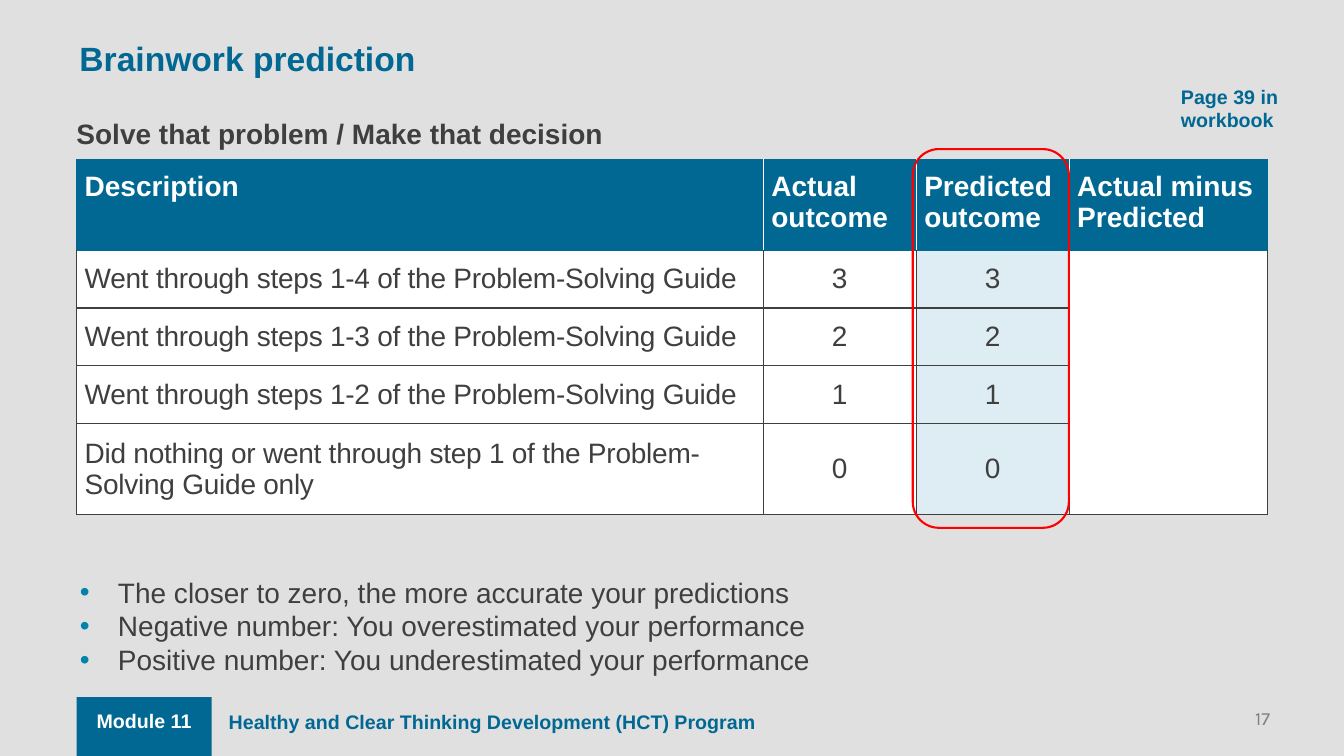
"""Build the Brainwork prediction slide."""
from dataclasses import dataclass
from typing import Any, Optional

import pptx
import pptx.dml.color
import pptx.enum.shapes
import pptx.enum.text
import pptx.oxml.ns
import pptx.util
from lxml import etree

Pt = pptx.util.Pt
RGBColor = pptx.dml.color.RGBColor
Align = pptx.enum.text.PP_ALIGN
Anchor = pptx.enum.text.MSO_ANCHOR
Shape = pptx.enum.shapes.MSO_SHAPE
qn = pptx.oxml.ns.qn

BACKGROUND = RGBColor(0xE0, 0xE0, 0xE0)
BLUE = RGBColor(0x00, 0x68, 0x92)
BULLET_BLUE = RGBColor(0x00, 0x82, 0xAA)
PALE_BLUE = RGBColor(0xDE, 0xED, 0xF3)
DARK = RGBColor(0x3F, 0x3F, 0x3F)
GREY = RGBColor(0x80, 0x80, 0x80)
WHITE = RGBColor(0xFF, 0xFF, 0xFF)
RED = RGBColor(0xFF, 0x00, 0x00)


@dataclass(frozen=True)
class Style:
    size: float
    color: RGBColor
    bold: bool = False
    font: str = "Arial"
    align: Any = Align.LEFT
    tracking: int = 0


@dataclass(frozen=True)
class Box:
    left: float
    top: float
    width: float
    height: float

    def lengths(self) -> tuple:
        return Pt(self.left), Pt(self.top), Pt(self.width), Pt(self.height)


@dataclass(frozen=True)
class Label:
    text: str
    box: Box
    style: Style
    inset: bool = True


@dataclass(frozen=True)
class Outcome:
    description: str
    score: str
    height: float


TITLE = Style(24, BLUE, bold=True)
HEADER = Style(20, WHITE, bold=True)
BODY = Style(20, DARK)
DESCRIPTION = Style(20, DARK, tracking=-20)
SCORE = Style(20, DARK, align=Align.CENTER)
NOTE = Style(14, BLUE, bold=True)

LABELS = [
    Label("Healthy and Clear Thinking Development (HCT) Program",
          Box(156.25, 503.25, 802, 34), NOTE),
    Label("Module 11", Box(54.75, 502.5, 96.5, 24.5),
          Style(14, WHITE, bold=True, align=Align.CENTER)),
    Label("17", Box(763.25, 504.75, 144, 14.5),
          Style(13.3, GREY, font="Karla", align=Align.RIGHT), inset=False),
    Label("Solve that problem / Make that decision",
          Box(47.5, 79.5, 453, 31.5), Style(20, DARK, bold=True)),
    Label("Page 39 in workbook", Box(836.5, 57, 99.5, 41), NOTE),
]
HEADINGS = ["Description", "Actual outcome", "Predicted outcome",
            "Actual minus Predicted"]
COLUMN_WIDTHS = [490.5, 109.25, 109.25, 141.75]
HEADER_HEIGHT = 65
OUTCOMES = [
    Outcome("Went through steps 1-4 of the Problem-Solving Guide", "3", 41.25),
    Outcome("Went through steps 1-3 of the Problem-Solving Guide", "2", 41.25),
    Outcome("Went through steps 1-2 of the Problem-Solving Guide", "1", 41.25),
    Outcome("Did nothing or went through step 1 of the Problem-Solving Guide only",
            "0", 65),
]
BULLETS = [
    "The closer to zero, the more accurate your predictions",
    "Negative number: You overestimated your performance",
    "Positive number: You underestimated your performance",
]


def add_text(paragraph: Any, text: str, style: Style) -> None:
    paragraph.alignment = style.align
    run = paragraph.add_run()
    run.text = text
    run.font.name = style.font
    run.font.size = Pt(style.size)
    run.font.bold = style.bold
    run.font.color.rgb = style.color
    if style.tracking:
        run.font._element.set("spc", str(style.tracking))


def clear_insets(frame: Any) -> None:
    frame.margin_left = frame.margin_right = Pt(0)
    frame.margin_top = frame.margin_bottom = Pt(0)


def place(placeholder: Any, box: Box, anchor: Any) -> Any:
    placeholder.left, placeholder.top, placeholder.width, placeholder.height = box.lengths()
    frame = placeholder.text_frame
    frame.auto_size = pptx.enum.text.MSO_AUTO_SIZE.NONE
    frame.word_wrap = True
    frame.vertical_anchor = anchor
    clear_insets(frame)
    return frame


def add_bullet(paragraph: Any, text: str) -> None:
    add_text(paragraph, text, BODY)
    paragraph.space_before = Pt(0)
    paragraph.line_spacing = 1.01
    properties = paragraph._p.get_or_add_pPr()
    properties.set("marL", str(Pt(27.25)))
    properties.set("indent", str(-Pt(27.25)))
    color = etree.SubElement(properties, qn("a:buClr"))
    etree.SubElement(color, qn("a:srgbClr"), val=str(BULLET_BLUE))
    etree.SubElement(properties, qn("a:buFont"), typeface="Arial")
    etree.SubElement(properties, qn("a:buChar"), char="•")


def add_label(slide: Any, label: Label) -> None:
    frame = slide.shapes.add_textbox(*label.box.lengths()).text_frame
    frame.word_wrap = True
    if not label.inset:
        clear_insets(frame)
    add_text(frame.paragraphs[0], label.text, label.style)


def add_shape(slide: Any, preset: Any, box: Box, fill: Optional[RGBColor],
              line: Optional[RGBColor]) -> None:
    shape = slide.shapes.add_shape(preset, *box.lengths())
    shape.shadow.inherit = False
    for part, color in ((shape.fill, fill), (shape.line.fill, line)):
        if color is None:
            part.background()
        else:
            part.solid()
            part.fore_color.rgb = color
    if line is not None:
        shape.line.width = Pt(1.5)


def format_cell(cell: Any, fill: RGBColor, anchor: Any, borders: dict) -> None:
    cell.fill.solid()
    cell.fill.fore_color.rgb = fill
    cell.vertical_anchor = anchor
    cell.margin_left = cell.margin_right = Pt(5.75)
    cell.margin_top = cell.margin_bottom = Pt(8.65)
    properties = cell._tc.get_or_add_tcPr()
    for position, side in enumerate("LRTB"):
        line = etree.Element(qn(f"a:ln{side}"), w=str(Pt(1)))
        solid = etree.SubElement(line, qn("a:solidFill"))
        etree.SubElement(solid, qn("a:srgbClr"), val=str(borders[side]))
        properties.insert(position, line)


def add_outcome_table(slide: Any) -> None:
    heights = [HEADER_HEIGHT] + [outcome.height for outcome in OUTCOMES]
    box = Box(54.75, 113.75, sum(COLUMN_WIDTHS), sum(heights))
    table = slide.shapes.add_table(len(heights), len(HEADINGS), *box.lengths()).table
    table.first_row = table.horz_banding = False
    for column, width in zip(table.columns, COLUMN_WIDTHS):
        column.width = Pt(width)
    for row, height in zip(table.rows, heights):
        row.height = Pt(height)
    last = len(HEADINGS) - 1
    for index, heading in enumerate(HEADINGS):
        cell = table.cell(0, index)
        format_cell(cell, BLUE, Anchor.TOP, {
            "L": WHITE if index else BLUE, "R": WHITE if index < last else BLUE,
            "T": BLUE, "B": BLUE})
        add_text(cell.text_frame.paragraphs[0], heading, HEADER)
    for row, outcome in enumerate(OUTCOMES, 1):
        borders = {"L": DARK, "R": DARK, "T": BLUE if row == 1 else DARK, "B": DARK}
        for index, fill in enumerate((WHITE, WHITE, PALE_BLUE, WHITE)):
            format_cell(table.cell(row, index), fill, Anchor.MIDDLE, borders)
        texts = ((outcome.description, DESCRIPTION), (outcome.score, SCORE),
                 (outcome.score, SCORE))
        for index, (text, style) in enumerate(texts):
            add_text(table.cell(row, index).text_frame.paragraphs[0], text, style)
    table.cell(1, last).merge(table.cell(len(OUTCOMES), last))


def main() -> None:
    presentation = pptx.Presentation()
    presentation.slide_width, presentation.slide_height = Pt(960), Pt(540)
    slide = presentation.slides.add_slide(presentation.slide_layouts[1])
    slide.background.fill.solid()
    slide.background.fill.fore_color.rgb = BACKGROUND

    title = place(slide.shapes.title, Box(56.75, 24.5, 642, 34), Anchor.MIDDLE)
    add_text(title.paragraphs[0], "Brainwork prediction", TITLE)
    body = place(slide.placeholders[1], Box(57, 410.5, 850, 99.5), Anchor.TOP)
    for index, text in enumerate(BULLETS):
        add_bullet(body.add_paragraph() if index else body.paragraphs[0], text)

    add_shape(slide, Shape.RECTANGLE, Box(54.75, 498, 96.5, 42), BLUE, None)
    add_outcome_table(slide)
    add_shape(slide, Shape.ROUNDED_RECTANGLE, Box(652, 106.5, 111.5, 270.5), None, RED)
    for label in LABELS:
        add_label(slide, label)
    presentation.save("out.pptx")


if __name__ == "__main__":
    main()
